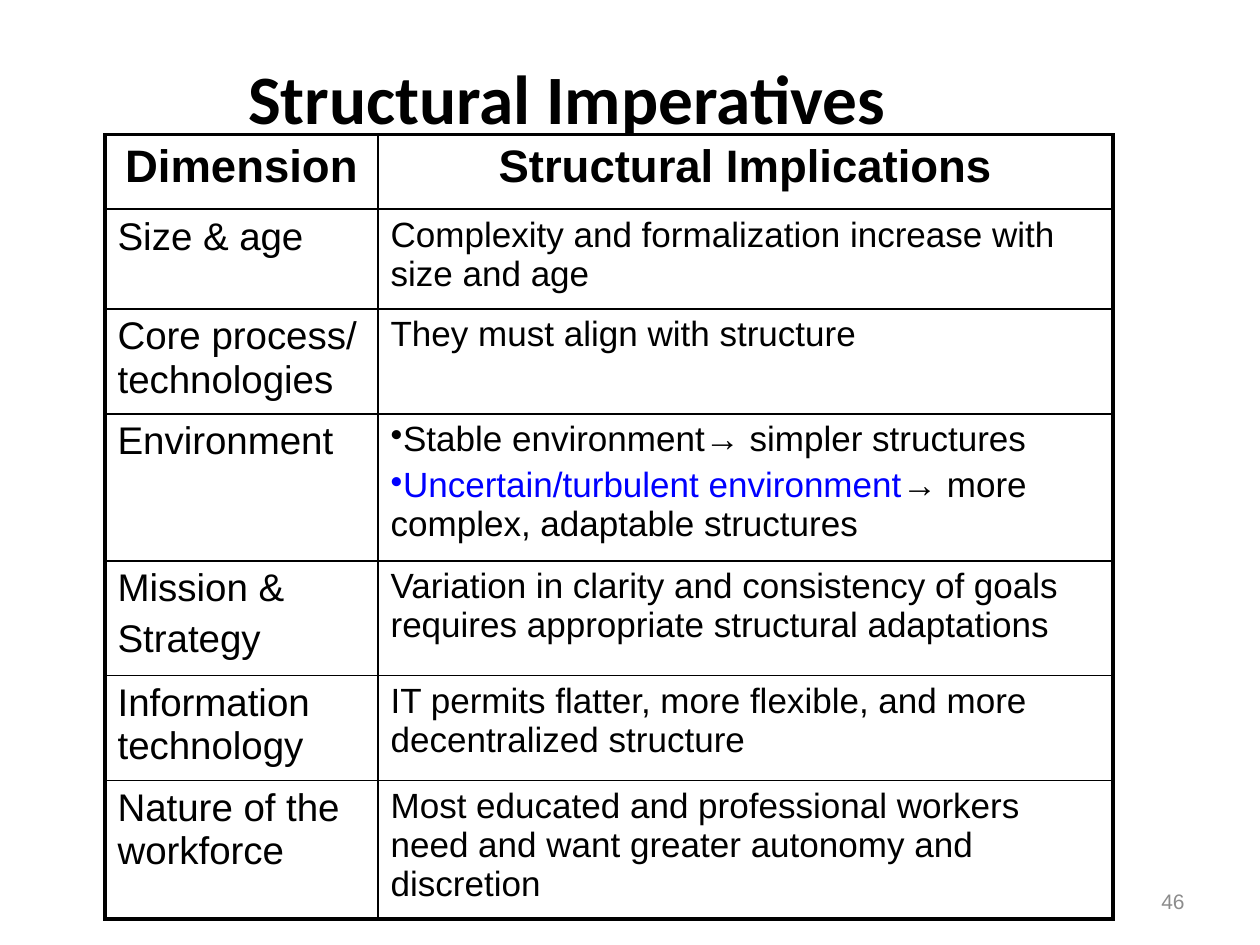
import pptx
import pptx.dml.color
import pptx.enum.text
import pptx.oxml.ns
import pptx.util
from dataclasses import dataclass
from lxml import etree

Pt = pptx.util.Pt
ALIGN = pptx.enum.text.PP_ALIGN
ANCHOR = pptx.enum.text.MSO_ANCHOR

# Content: a cell is a list of paragraphs, a paragraph a list of (text, colour)
TITLE = "Structural Imperatives"
PAGE_NUMBER = "46"
HEADER = ("Dimension", "Structural Implications")
ROWS = [
    (["Size & age"], ["Complexity and formalization increase with size and age"]),
    (["Core process/ technologies"], ["They must align with structure"]),
    (["Environment"], [
        "Stable environment→ simpler structures",
        [("Uncertain/turbulent environment", "highlight"),
         ("→ more complex, adaptable structures", "text")],
    ]),
    (["Mission &", "Strategy"],
     ["Variation in clarity and consistency of goals requires "
      "appropriate structural adaptations"]),
    (["Information technology"],
     ["IT permits flatter, more flexible, and more decentralized structure"]),
    (["Nature of the workforce"],
     ["Most educated and professional workers need and want greater "
      "autonomy and discretion"]),
]
COLUMN_WIDTHS = (156, 420)
ROW_HEIGHTS = (42.5, 57, 60, 84, 65.5, 60, 79)


@dataclass(frozen=True)
class Theme:
    text: str = "000000"
    highlight: str = "0000FF"
    muted: str = "8C8C8C"
    title_font: str = "Calibri"
    body_font: str = "Arial"
    title_size: float = 39.6
    header_size: float = 26
    dimension_size: float = 22
    implication_size: float = 20
    number_size: float = 12
    outer_line: float = 2.25
    inner_line: float = 1


THEME = Theme()


def style(font, size, color=THEME.text, name=THEME.body_font, bold=False):
    font.size, font.name, font.bold = Pt(size), name, bold
    font.color.rgb = pptx.dml.color.RGBColor.from_string(color)


def add_bullet(paragraph):
    properties = paragraph._p.get_or_add_pPr()
    properties.set("marL", "0")
    properties.set("indent", "0")
    bullet = etree.SubElement(properties, pptx.oxml.ns.qn("a:buChar"))
    bullet.set("char", "•")


def fill_cell(cell, paragraphs, size, align=ALIGN.LEFT, bold=False):
    frame = cell.text_frame
    for index, content in enumerate(paragraphs):
        paragraph = frame.add_paragraph() if index else frame.paragraphs[0]
        paragraph.alignment = align
        if index:
            paragraph.space_before = Pt(size * 0.2)
        if len(paragraphs) > 1 and size == THEME.implication_size:
            add_bullet(paragraph)
        style(paragraph.font, size, bold=bold)
        runs = [(content, "text")] if isinstance(content, str) else content
        for text, color in runs:
            run = paragraph.add_run()
            run.text = text
            if len(runs) > 1:
                run.font.color.rgb = pptx.dml.color.RGBColor.from_string(
                    getattr(THEME, color))


def set_borders(cell, outer_edges):
    properties = cell._tc.get_or_add_tcPr()
    for index, (edge, is_outer) in enumerate(outer_edges.items()):
        width = THEME.outer_line if is_outer else THEME.inner_line
        line = etree.Element(pptx.oxml.ns.qn(f"a:ln{edge}"), w=str(int(Pt(width))))
        solid = etree.SubElement(line, pptx.oxml.ns.qn("a:solidFill"))
        etree.SubElement(solid, pptx.oxml.ns.qn("a:srgbClr"), val=THEME.text)
        properties.insert(index, line)


def add_title(slide):
    title = slide.shapes.title
    title.left, title.top, title.width, title.height = Pt(0), Pt(21.6), Pt(648), Pt(90)
    frame = title.text_frame
    frame.text = TITLE
    frame.vertical_anchor = ANCHOR.MIDDLE
    frame.margin_bottom = Pt(26)  # lifts the line clear of the table
    frame.paragraphs[0].alignment = ALIGN.CENTER
    style(frame.paragraphs[0].font, THEME.title_size, name=THEME.title_font, bold=True)


def add_imperatives(slide):
    table = slide.shapes.add_table(
        len(ROWS) + 1, len(HEADER), Pt(60), Pt(77),
        Pt(sum(COLUMN_WIDTHS)), Pt(sum(ROW_HEIGHTS))).table
    table.first_row = table.horz_banding = False
    for column, width in zip(table.columns, COLUMN_WIDTHS):
        column.width = Pt(width)
    for row, height in zip(table.rows, ROW_HEIGHTS):
        row.height = Pt(height)

    # Text
    for c, heading in enumerate(HEADER):
        fill_cell(table.cell(0, c), [heading], THEME.header_size, ALIGN.CENTER, True)
    for r, (dimension, implications) in enumerate(ROWS, start=1):
        fill_cell(table.cell(r, 0), dimension, THEME.dimension_size)
        fill_cell(table.cell(r, 1), implications, THEME.implication_size)

    # Heavy frame, thin inner rules, no fill
    for r in range(len(ROWS) + 1):
        for c in range(len(HEADER)):
            cell = table.cell(r, c)
            cell.fill.background()
            set_borders(cell, {"L": c == 0, "R": c == len(HEADER) - 1,
                               "T": r == 0, "B": r == len(ROWS)})


def add_page_number(slide):
    frame = slide.shapes.add_textbox(Pt(516), Pt(500.5), Pt(168), Pt(28.8)).text_frame
    frame.word_wrap = True
    frame.vertical_anchor = ANCHOR.MIDDLE
    frame.text = PAGE_NUMBER
    frame.paragraphs[0].alignment = ALIGN.RIGHT
    style(frame.paragraphs[0].font, THEME.number_size, THEME.muted)


def main():
    deck = pptx.Presentation()
    deck.slide_width, deck.slide_height = Pt(720), Pt(540)
    slide = deck.slides.add_slide(deck.slide_layouts[5])
    add_page_number(slide)
    add_title(slide)
    add_imperatives(slide)
    deck.save("out.pptx")


if __name__ == "__main__":
    main()
